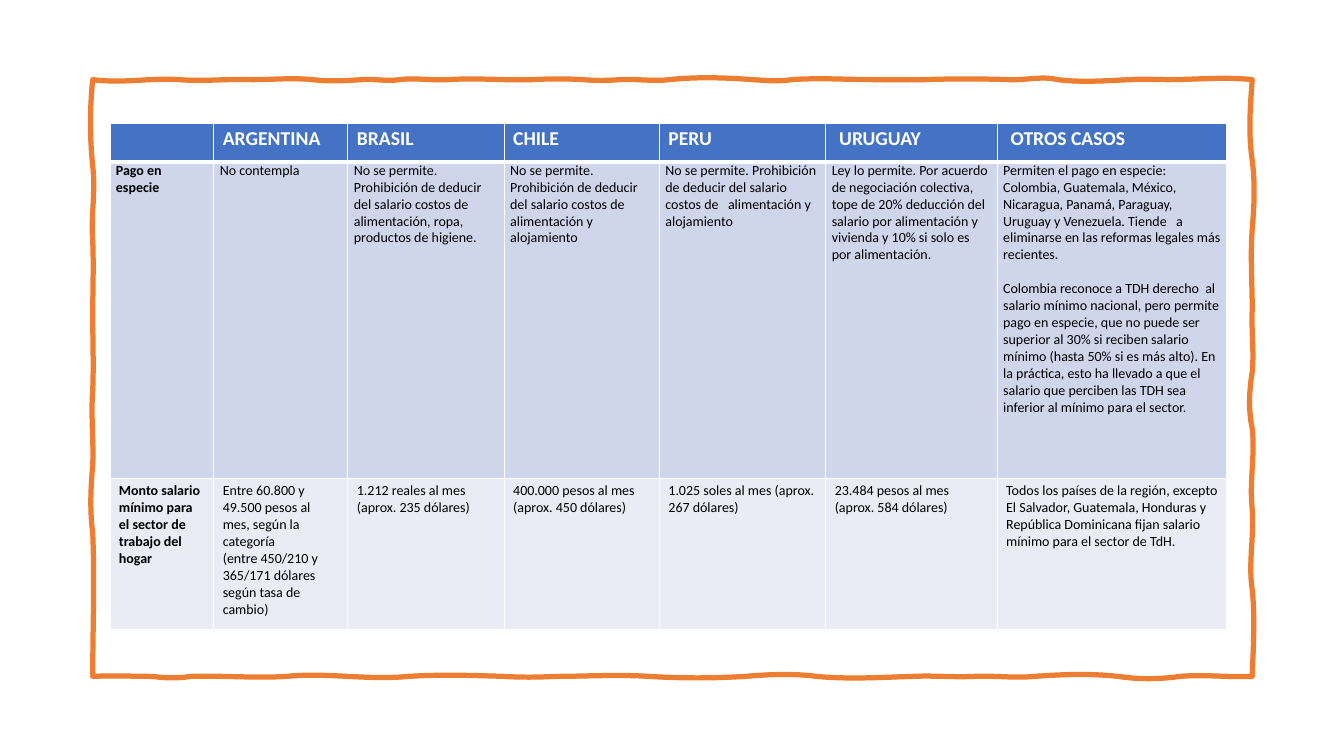
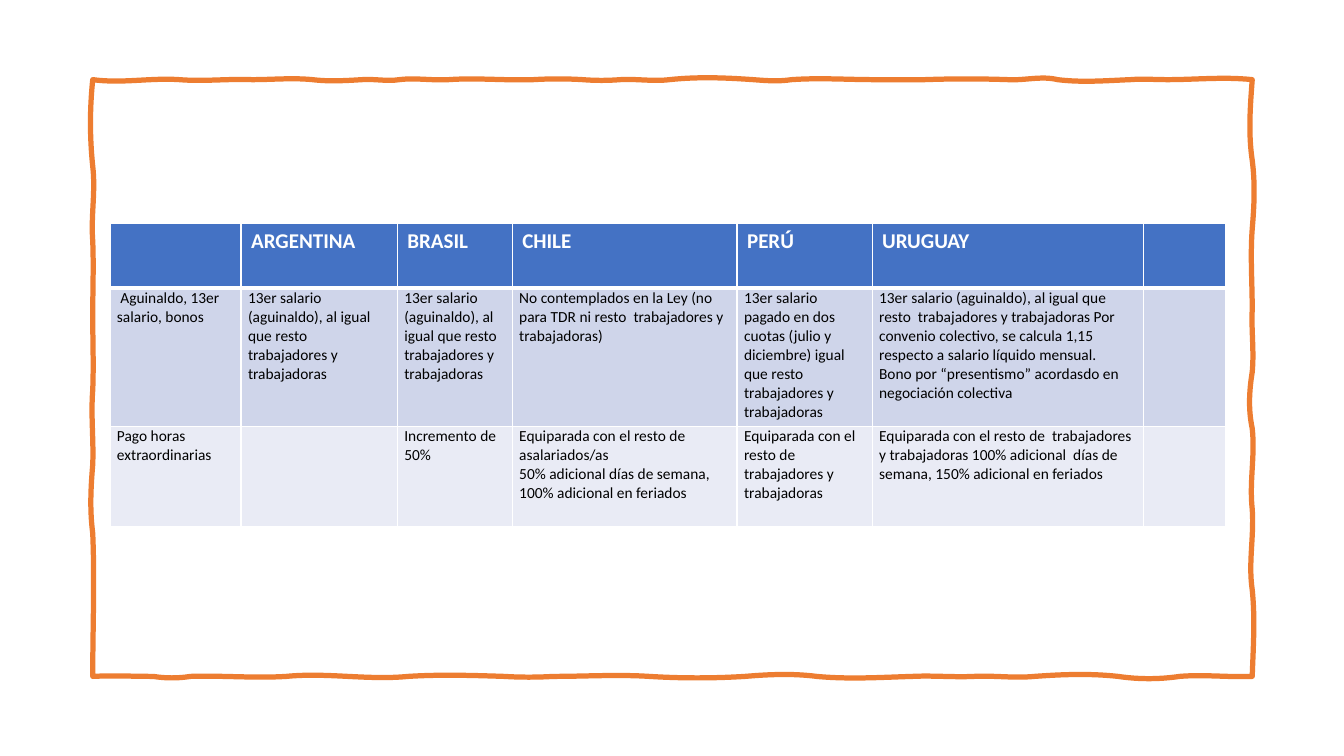
from lxml.etree import Element, SubElement
from pptx import Presentation
from pptx.dml.color import RGBColor
from pptx.oxml.ns import qn
from pptx.util import Inches, Pt

WHITE, BLACK, ORANGE = "FFFFFF", "000000", "ED7D31"
ROW_FILLS = ["4472C4", "CFD5EA", "E9EBF5"]
FONT = "Calibri"

# Hand-drawn frame, in 1/100 inch: each side runs along one axis from corner to corner.
# A wave is (end position, first bend, second bend).
LEFT, TOP, RIGHT, BOTTOM = 92, 79, 1242, 671
FRAME_SIDES = [
    ("across", BOTTOM, LEFT, [
        (152, -1, 0), (189, 2, 2), (284, -1, 2), (345, -2, -1),
        (405, 1, 2), (500, -2, -1), (549, 1, 1), (644, 0, -2),
        (739, 2, 2), (810, -2, -3), (905, 3, 1), (966, -1, 1),
        (1026, -1, 2), (1109, -2, -3), (1170, 3, 3), (RIGHT, -2, 1)]),
    ("down", RIGHT, BOTTOM, [
        (585, 1, 3), (505, -4, 2), (425, -3, 3), (369, -4, -3),
        (307, 2, -1), (227, 0, -2), (159, 2, 3), (TOP, -4, -2)]),
    ("across", TOP, RIGHT, [
        (1158, -3, 0), (1121, 0, -1), (1049, 1, 3), (1000, -4, 1),
        (917, -1, -1), (868, 0, 0), (785, 0, -2), (747, 2, 1),
        (664, -2, -3), (615, 2, -1), (578, 1, 1), (529, -1, -1),
        (445, 1, -2), (396, 1, -2), (359, 2, -1), (310, 1, 2),
        (250, -2, 0), (178, -1, 2), (LEFT, -2, 4)]),
    ("down", LEFT, TOP, [
        (165, -3, -3), (239, 3, -2), (313, 1, 0), (387, 0, 1),
        (461, -2, 1), (529, -2, -3), (BOTTOM, 2, 0)]),
]

# Table contents: a cell is a list of paragraphs; insets are (sides, top and bottom)
TABLES = [
    {
        "top": 1.22,
        "columns": [1.03, 1.33, 1.55, 1.54, 1.65, 1.7, 2.28],
        "heights": [0.35, 3.14, 1.5],
        "insets": [(0.09, 0.04), (0.06, 0), (0.09, 0.04)],
        "sizes": [14, 10, 10],
        "bold_labels": True,
        "rows": [
            [[], ["ARGENTINA"], ["BRASIL"], ["CHILE"], ["PERU"], [" URUGUAY"],
             [" OTROS CASOS"]],
            [["Pago en especie"],
             ["No contempla"],
             ["No se permite. Prohibición de deducir del salario costos de "
              "alimentación, ropa, productos de higiene."],
             ["No se permite. Prohibición de deducir del salario costos de "
              "  alimentación y alojamiento"],
             ["No se permite. Prohibición de deducir del salario costos de "
              "  alimentación y alojamiento"],
             ["Ley lo permite. Por acuerdo de negociación colectiva, tope de 20% "
              "deducción del salario por alimentación y vivienda y 10% si solo es "
              "por alimentación."],
             ["Permiten el pago en especie: Colombia, Guatemala, México, Nicaragua, "
              "Panamá, Paraguay, Uruguay y Venezuela. Tiende   a eliminarse en las "
              "reformas legales más recientes.",
              "Colombia reconoce a TDH derecho  al salario mínimo nacional, pero "
              "permite pago en especie, que no puede ser superior al 30% si reciben "
              "salario mínimo (hasta 50% si es más alto). En la práctica, esto ha "
              "llevado a que el salario que perciben las TDH sea inferior al mínimo "
              "para el sector."]],
            [["Monto salario mínimo para el sector de trabajo del hogar"],
             ["Entre 60.800 y 49.500 pesos al mes, según la categoría",
              "(entre 450/210 y 365/171 dólares según tasa de cambio)"],
             ["1.212 reales al mes", "(aprox. 235 dólares)"],
             ["400.000 pesos al mes (aprox. 450 dólares)"],
             ["1.025 soles al mes (aprox. 267 dólares)"],
             ["23.484 pesos al mes (aprox. 584 dólares)"],
             ["Todos los países de la región, excepto El Salvador, Guatemala, "
              "Honduras y República Dominicana fijan salario mínimo para el sector "
              "de TdH."]],
        ],
        "spaced_cell": (1, 6),
    },
    {
        "top": 2.22,
        "columns": [1.3, 1.55, 1.14, 2.23, 1.34, 2.69, 0.82],
        "heights": [0.64, 1.37, 0.99],
        "insets": [(0.1, 0.05), (0.07, 0), (0.07, 0)],
        "sizes": [15, 11, 11],
        "bold_labels": False,
        "rows": [
            [[], ["ARGENTINA"], ["BRASIL"], ["CHILE"], ["PERÚ"], ["URUGUAY"], []],
            [[" Aguinaldo, 13er salario, bonos"],
             ["13er salario (aguinaldo), al igual que resto trabajadores y "
              "trabajadoras"],
             ["13er salario (aguinaldo), al igual que resto trabajadores y "
              "trabajadoras"],
             ["No contemplados en la Ley (no para TDR ni resto  trabajadores y "
              "trabajadoras)"],
             ["13er salario pagado en dos cuotas (julio y diciembre) igual que "
              "resto  trabajadores y trabajadoras"],
             ["13er salario (aguinaldo), al igual que resto  trabajadores y "
              "trabajadoras Por convenio colectivo, se calcula 1,15 respecto a "
              "salario líquido mensual.",
              "Bono por “presentismo” acordasdo en negociación colectiva"],
             []],
            [["Pago horas extraordinarias"],
             [],
             ["Incremento de 50%"],
             ["Equiparada con el resto de asalariados/as",
              "50% adicional días de semana, 100% adicional en feriados"],
             ["Equiparada con el resto de  trabajadores y trabajadoras"],
             ["Equiparada con el resto de  trabajadores y trabajadoras 100% "
              "adicional  días de semana, 150% adicional en feriados"],
             []],
        ],
        "spaced_cell": None,
    },
]


def color(value):
    return RGBColor.from_string(value)


def add_borders(cell, top_width, bottom_width):
    properties = cell._tc.get_or_add_tcPr()
    widths = {"a:lnL": 1, "a:lnR": 1, "a:lnT": top_width, "a:lnB": bottom_width}
    for position, (tag, width) in enumerate(widths.items()):
        line = SubElement(properties, qn(tag), w=str(Pt(width)))
        fill = SubElement(line, qn("a:solidFill"))
        SubElement(fill, qn("a:srgbClr"), val=WHITE)
        properties.insert(position, line)


# Frame corners and curve ends, with two control points a third of the way from each
ends, controls = [], []
for direction, level, start, waves in FRAME_SIDES:
    for end, first, second in waves:
        third = (end - start) / 3
        curve = [(round(start + third), level + first),
                 (round(end - third), level + second), (end, level)]
        if direction == "down":
            curve = [(x, y) for y, x in curve]
        controls.append(curve[:2])
        ends.append(curve[2])
        start = end

deck = Presentation()
deck.slide_width, deck.slide_height = Inches(13.33), Inches(7.5)
blank_layout = deck.slide_layouts[6]

for content in TABLES:
    page = deck.slides.add_slide(blank_layout)

    # Frame: straight segments turned into curves
    builder = page.shapes.build_freeform(LEFT, BOTTOM, scale=Inches(0.01))
    builder.add_line_segments(ends, close=True)
    frame = builder.convert_to_shape()
    segments = list(frame._element.iter(qn("a:lnTo")))
    for segment, handles in zip(segments, controls):
        segment.tag = qn("a:cubicBezTo")
        for position, (x, y) in enumerate(handles):
            handle = Element(qn("a:pt"), x=str(x - LEFT), y=str(y - TOP))
            segment.insert(position, handle)
    frame.shadow.inherit = False
    frame.fill.background()
    frame.line.color.rgb = color(ORANGE)
    frame.line.width = Pt(3.75)

    # Table grid
    columns, heights = content["columns"], content["heights"]
    table = page.shapes.add_table(
        len(heights), len(columns), Inches(1.09), Inches(content["top"]),
        Inches(sum(columns)), Inches(sum(heights))).table
    for column, width in zip(table.columns, columns):
        column.width = Inches(width)
    for row, height in zip(table.rows, heights):
        row.height = Inches(height)

    # Cells
    for r, texts in enumerate(content["rows"]):
        side, edge = content["insets"][r]
        for c, paragraphs in enumerate(texts):
            cell = table.cell(r, c)
            cell.fill.solid()
            cell.fill.fore_color.rgb = color(ROW_FILLS[r])
            cell.margin_left = cell.margin_right = Inches(side)
            cell.margin_top = cell.margin_bottom = Inches(edge)
            add_borders(cell, 3 if r == 1 else 1, 3 if r == 0 else 1)
            if not paragraphs:
                continue
            cell.text_frame.text = "\n".join(paragraphs)
            for number, para in enumerate(cell.text_frame.paragraphs):
                para.font.name = FONT
                para.font.size = Pt(content["sizes"][r])
                para.font.bold = r == 0 or (c == 0 and content["bold_labels"])
                para.font.color.rgb = color(WHITE if r == 0 else BLACK)
                if number and (r, c) == content["spaced_cell"]:
                    para.space_before = Pt(12)

deck.save("out.pptx")
